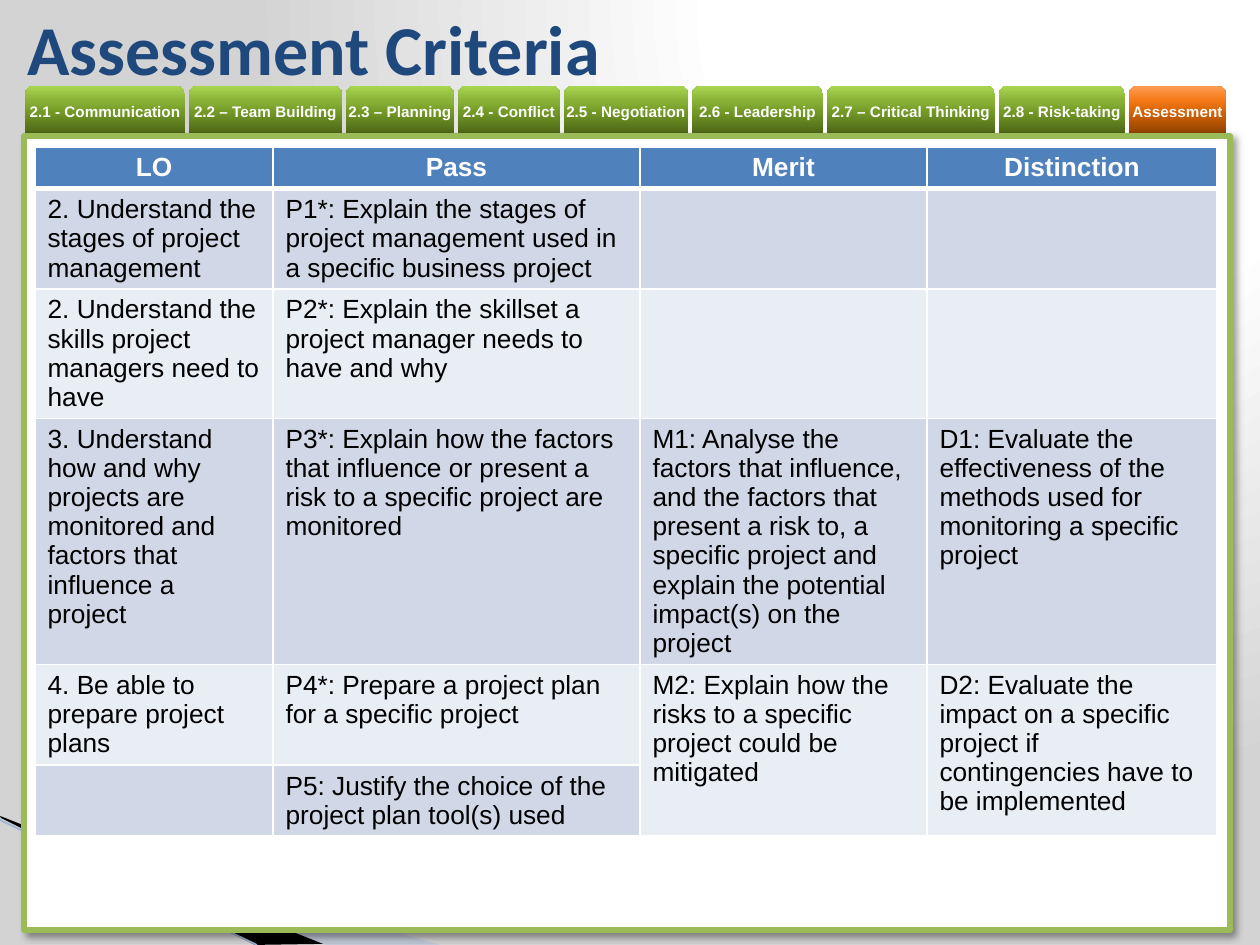
from lxml.etree import SubElement
from pptx import Presentation
from pptx.dml.color import RGBColor
from pptx.enum.dml import MSO_LINE
from pptx.enum.shapes import MSO_CONNECTOR, MSO_SHAPE
from pptx.enum.text import MSO_ANCHOR, MSO_AUTO_SIZE, PP_ALIGN
from pptx.oxml import parse_xml
from pptx.oxml.ns import nsdecls, qn
from pptx.util import Pt

PX = 7257
color = RGBColor.from_string


def set_stops(gradient, stops):
    stop_list = gradient.find(qn("a:gsLst"))
    stop_list.clear()
    for position, hex_color in stops:
        stop = SubElement(stop_list, qn("a:gs"), pos=str(position * 1000))
        SubElement(stop, qn("a:srgbClr"), val=hex_color)


def write(frame, text, size, hex_color, bold=True, font="Arial", align=PP_ALIGN.LEFT):
    paragraph = frame.paragraphs[0]
    paragraph.alignment = align
    run = paragraph.add_run()
    run.text = text
    run.font.name = font
    run.font.size = Pt(size)
    run.font.bold = bold
    run.font.color.rgb = color(hex_color)


deck = Presentation()
deck.slide_width = 1260 * PX
deck.slide_height = 945 * PX
slide = deck.slides.add_slide(deck.slide_layouts[5])
shapes = slide.shapes

slide.background.fill.gradient()
backdrop = slide.element.find(".//" + qn("a:gradFill"))
set_stops(backdrop, [(0, "FFFFFF"), (40, "FFFFFF"), (100, "D3D3D3")])
backdrop.remove(backdrop.find(qn("a:lin")))
radial = SubElement(backdrop, qn("a:path"), path="circle")
SubElement(radial, qn("a:fillToRect"), l="65000", t="0", r="0", b="98000")

title = shapes.title
title.left, title.top, title.width, title.height = 15 * PX, 0, 1062 * PX, 96 * PX
title.text_frame.vertical_anchor = MSO_ANCHOR.MIDDLE
title.text_frame.auto_size = MSO_AUTO_SIZE.NONE
write(title.text_frame, "Assessment Criteria", 40, "1F497D", font="Calibri")

swooshes = [
    ([(0, 818), (440, 945), (326, 945), (0, 817)], "A7B9DB", 40),
    ([(0, 816), (323, 944), (255, 945), (1, 818)], "000000", 100),
]
for points, hex_color, opacity in swooshes:
    outline = shapes.build_freeform(*points[0], scale=PX)
    outline.add_line_segments(points[1:], close=True)
    swoosh = outline.convert_to_shape()
    swoosh.shadow.inherit = False
    swoosh.fill.solid()
    swoosh.fill.fore_color.rgb = color(hex_color)
    swoosh.line.fill.background()
    tint = swoosh.element.spPr.find(".//" + qn("a:srgbClr"))
    SubElement(tint, qn("a:alpha"), val=str(opacity * 1000))

edge = shapes.add_connector(MSO_CONNECTOR.STRAIGHT, 0, 820 * PX, 257 * PX, 945 * PX)
edge.line.color.rgb = color("9EB3D6")
edge.line.width = Pt(0.95)
SubElement(edge.element.spPr, qn("a:effectLst"))

GREEN = [(0, "4A6316"), (50, "769C27"), (70, "89B137"), (100, "A9D651")]
ORANGE = [(0, "8B3F00"), (50, "DA6606"), (70, "F47917"), (100, "FF9C54")]
tabs = [
    ("2.1 - Communication", 160, GREEN),
    ("2.2 – Team Building", 153, GREEN),
    ("2.3 – Planning", 108, GREEN),
    ("2.4 - Conflict", 102, GREEN),
    ("2.5 - Negotiation", 124, GREEN),
    ("2.6 - Leadership", 131, GREEN),
    ("2.7 – Critical Thinking", 168, GREEN),
    ("2.8 - Risk-taking", 126, GREEN),
    ("Assessment", 97, ORANGE),
]
tab_left = 25
for label, width, stops in tabs:
    tab = shapes.add_shape(
        MSO_SHAPE.ROUND_2_SAME_RECTANGLE, tab_left * PX, 86 * PX, width * PX, 49 * PX
    )
    tab.shadow.inherit = False
    tab.line.fill.background()
    tab.fill.gradient()
    tab.fill.gradient_angle = 90
    set_stops(tab.element.spPr.find(qn("a:gradFill")), stops)
    frame = tab.text_frame
    frame.margin_left = frame.margin_right = frame.margin_top = frame.margin_bottom = 0
    frame.vertical_anchor = MSO_ANCHOR.MIDDLE
    frame.word_wrap = False
    write(frame, label, 8.7, "FFFFFF", align=PP_ALIGN.CENTER)
    tab_left += width + 4

panel = shapes.add_shape(MSO_SHAPE.RECTANGLE, 24 * PX, 136 * PX, 1206 * PX, 794 * PX)
panel.shadow.inherit = False
panel.fill.solid()
panel.fill.fore_color.rgb = color("FFFFFF")
panel.line.color.rgb = color("9BBB59")
panel.line.width = Pt(3)
panel_shadow = SubElement(
    panel.element.spPr.find(qn("a:effectLst")), qn("a:outerShdw"),
    blurRad="50800", dist="38100", dir="2700000", algn="tl", rotWithShape="0",
)
shade = SubElement(panel_shadow, qn("a:srgbClr"), val="000000")
SubElement(shade, qn("a:alpha"), val="40000")

criteria = [
    ["LO", "Pass", "Merit", "Distinction"],
    ["2. Understand the stages of project management",
     "P1*: Explain the stages of project management used in a specific business project",
     "", ""],
    ["2. Understand the skills project managers need to have",
     "P2*: Explain the skillset a project manager needs to have and why", "", ""],
    ["3. Understand how and why projects are monitored and factors that influence a project",
     "P3*: Explain how the factors that influence or present a risk to a specific project "
     "are monitored",
     "M1: Analyse the factors that influence, and the factors that present a risk to, a "
     "specific project and explain the potential impact(s) on the project",
     "D1: Evaluate the effectiveness of the methods used for monitoring a specific project"],
    ["4. Be able to prepare project plans",
     "P4*: Prepare a project plan for a specific project",
     "M2: Explain how the risks to a specific project could be mitigated",
     "D2: Evaluate the impact on a specific project if contingencies have to be implemented"],
    ["", "P5: Justify the choice of the project plan tool(s) used", "", ""],
]
column_widths = [238, 367, 287, 290]
row_heights = [41, 100, 129, 246, 101, 70]
grid = shapes.add_table(
    len(row_heights), len(column_widths), 35 * PX, 147 * PX,
    sum(column_widths) * PX, sum(row_heights) * PX,
).table
for column, width in zip(grid.columns, column_widths):
    column.width = width * PX
for row, height in zip(grid.rows, row_heights):
    row.height = height * PX

for r, entries in enumerate(criteria):
    header = r == 0
    row_fill = "4F81BD" if header else ("E9EDF4", "D0D8E8")[r % 2]
    for c, entry in enumerate(entries):
        cell = grid.cell(r, c)
        cell.fill.solid()
        cell.fill.fore_color.rgb = color(row_fill)
        if entry:
            write(cell.text_frame, entry, 15, "FFFFFF" if header else "000000",
                  bold=header, align=PP_ALIGN.CENTER if header else PP_ALIGN.LEFT)
        weights = {"L": 1, "R": 1, "T": 3 if r == 1 else 1, "B": 3 if header else 1}
        for index, (side, weight) in enumerate(weights.items()):
            border = parse_xml(
                f'<a:ln{side} {nsdecls("a")} w="{weight * 12700}"><a:solidFill>'
                f'<a:srgbClr val="FFFFFF"/></a:solidFill></a:ln{side}>'
            )
            cell._tc.get_or_add_tcPr().insert(index, border)

for c in (2, 3):
    grid.cell(4, c).merge(grid.cell(5, c))

deck.save("out.pptx")
